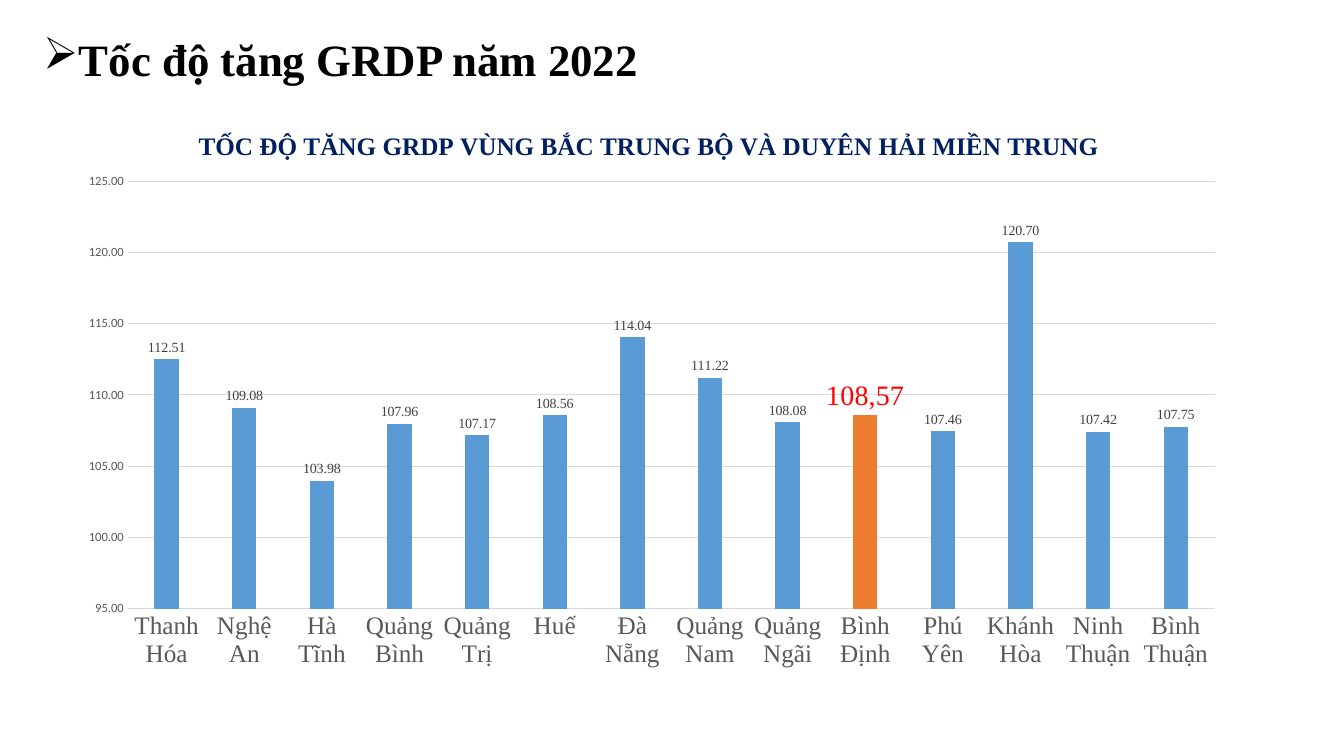
from lxml import etree
from pptx import Presentation
from pptx.chart.data import CategoryChartData
from pptx.dml.color import RGBColor
from pptx.enum.chart import XL_CHART_TYPE, XL_LABEL_POSITION, XL_TICK_MARK
from pptx.enum.text import MSO_AUTO_SIZE, PP_ALIGN
from pptx.oxml import parse_xml
from pptx.oxml.ns import nsdecls, qn
from pptx.util import Inches, Pt

COLUMNS = XL_CHART_TYPE.COLUMN_CLUSTERED
OUTSIDE_END = XL_LABEL_POSITION.OUTSIDE_END
NO_TICK = XL_TICK_MARK.NONE
JUSTIFY = PP_ALIGN.JUSTIFY
GROW = MSO_AUTO_SIZE.SHAPE_TO_FIT_TEXT

SERIF = "Times New Roman"
SANS = "Calibri"
BLACK, NAVY, RED = "000000", "002060", "FF0000"
GREY, DARK_GREY, LIGHT_GREY = "595959", "404040", "D9D9D9"
BLUE, ORANGE = "5B9BD5", "ED7D31"
NUMBER_FORMAT = "#,##0.00"

GROWTH = {
    "Thanh Hóa": 112.51,
    "Nghệ An": 109.08,
    "Hà Tĩnh": 103.98,
    "Quảng Bình": 107.96,
    "Quảng Trị": 107.17,
    "Huế": 108.56,
    "Đà Nẵng": 114.04,
    "Quảng Nam": 111.22,
    "Quảng Ngãi": 108.08,
    "Bình Định": 108.57,
    "Phú Yên": 107.46,
    "Khánh Hòa": 120.7,
    "Ninh Thuận": 107.42,
    "Bình Thuận": 107.75,
}
HIGHLIGHT = "Bình Định"
PLOT_LAYOUT = {"x": 0.058, "y": 0.127, "w": 0.922, "h": 0.751}


def rgb(value):
    return RGBColor.from_string(value)


def style_font(font, size, color, name, bold=False):
    font.size = Pt(size)
    font.color.rgb = rgb(color)
    font.name = name
    font.bold = bold


def style_line(line, color):
    line.color.rgb = rgb(color)
    line.width = Pt(0.75)


def fill_solid(fill, color):
    fill.solid()
    fill.fore_color.rgb = rgb(color)


def add_run(p, text, size, color, bold=False):
    r = p.add_run()
    r.text = text
    style_font(r.font, size, color, SERIF, bold)


def add_heading(s, text):
    box = s.shapes.add_textbox(Inches(0.33), Inches(0.27), Inches(12.6), Inches(0.64))
    tf = box.text_frame
    tf.word_wrap = True
    tf.auto_size = GROW
    p = tf.paragraphs[0]
    p.alignment = JUSTIFY
    p.space_before = Pt(4.3)
    pPr = p._p.get_or_add_pPr()
    pPr.set("marL", str(Inches(0.06)))
    pPr.set("indent", str(Inches(-0.56)))
    etree.SubElement(pPr, qn("a:buChar")).set("char", "➢")
    add_run(p, text, 32, BLACK, bold=True)


def place_plot(chart):
    fields = "".join(f'<c:{key}Mode val="edge"/>' for key in "xy")
    fields += "".join(f'<c:{key} val="{val}"/>' for key, val in PLOT_LAYOUT.items())
    layout = parse_xml(
        f'<c:layout {nsdecls("c")}><c:manualLayout><c:layoutTarget val="inner"/>'
        f"{fields}</c:manualLayout></c:layout>"
    )
    plot_area = chart._chartSpace.chart.plotArea
    for old in plot_area.findall(qn("c:layout")):
        plot_area.remove(old)
    plot_area.insert(0, layout)


def style_axes(chart):
    provinces, values = chart.category_axis, chart.value_axis
    for axis, size, name in ((provinces, 18, SERIF), (values, 9, SANS)):
        axis.major_tick_mark = NO_TICK
        axis.minor_tick_mark = NO_TICK
        style_font(axis.tick_labels.font, size, GREY, name)
    style_line(provinces.format.line, LIGHT_GREY)
    values.minimum_scale = 95
    values.maximum_scale = 125
    values.major_unit = 5
    values.format.line.fill.background()
    values.has_major_gridlines = True
    style_line(values.major_gridlines.format.line, LIGHT_GREY)
    values.tick_labels.number_format = NUMBER_FORMAT
    values.tick_labels.number_format_is_linked = False


def style_columns(chart):
    plot = chart.plots[0]
    plot.vary_by_categories = False
    plot.gap_width = 219
    plot.overlap = -27
    series = plot.series[0]
    series.invert_if_negative = False
    fill_solid(series.format.fill, BLUE)
    labels = series.data_labels
    labels.show_value = True
    labels.position = OUTSIDE_END
    labels.number_format = NUMBER_FORMAT
    labels.number_format_is_linked = False
    style_font(labels.font, 10, DARK_GREY, SERIF)
    point = series.points[list(GROWTH).index(HIGHLIGHT)]
    fill_solid(point.format.fill, ORANGE)
    add_run(point.data_label.text_frame.paragraphs[0], "108,57", 20, RED)
    point.data_label.position = OUTSIDE_END


def add_growth_chart(s, title):
    data = CategoryChartData(number_format=NUMBER_FORMAT)
    data.categories = list(GROWTH)
    data.add_series("Series 1", list(GROWTH.values()))
    frame = s.shapes.add_chart(
        COLUMNS, Inches(0.59), Inches(1.08), Inches(11.69), Inches(5.65), data
    )
    chart = frame.chart
    style_font(chart.font, 10, BLACK, SANS)
    chart.has_legend = False
    chart.has_title = True
    add_run(chart.chart_title.text_frame.paragraphs[0], title, 18, NAVY, bold=True)
    chart.chart_title.include_in_layout = False
    place_plot(chart)
    style_axes(chart)
    style_columns(chart)


def main():
    prs = Presentation()
    prs.slide_width = Inches(13.33)
    prs.slide_height = Inches(7.5)
    s = prs.slides.add_slide(prs.slide_layouts[6])
    add_heading(s, "Tốc độ tăng GRDP năm 2022")
    add_growth_chart(s, "TỐC ĐỘ TĂNG GRDP VÙNG BẮC TRUNG BỘ VÀ DUYÊN HẢI MIỀN TRUNG")
    prs.save("out.pptx")


if __name__ == "__main__":
    main()
